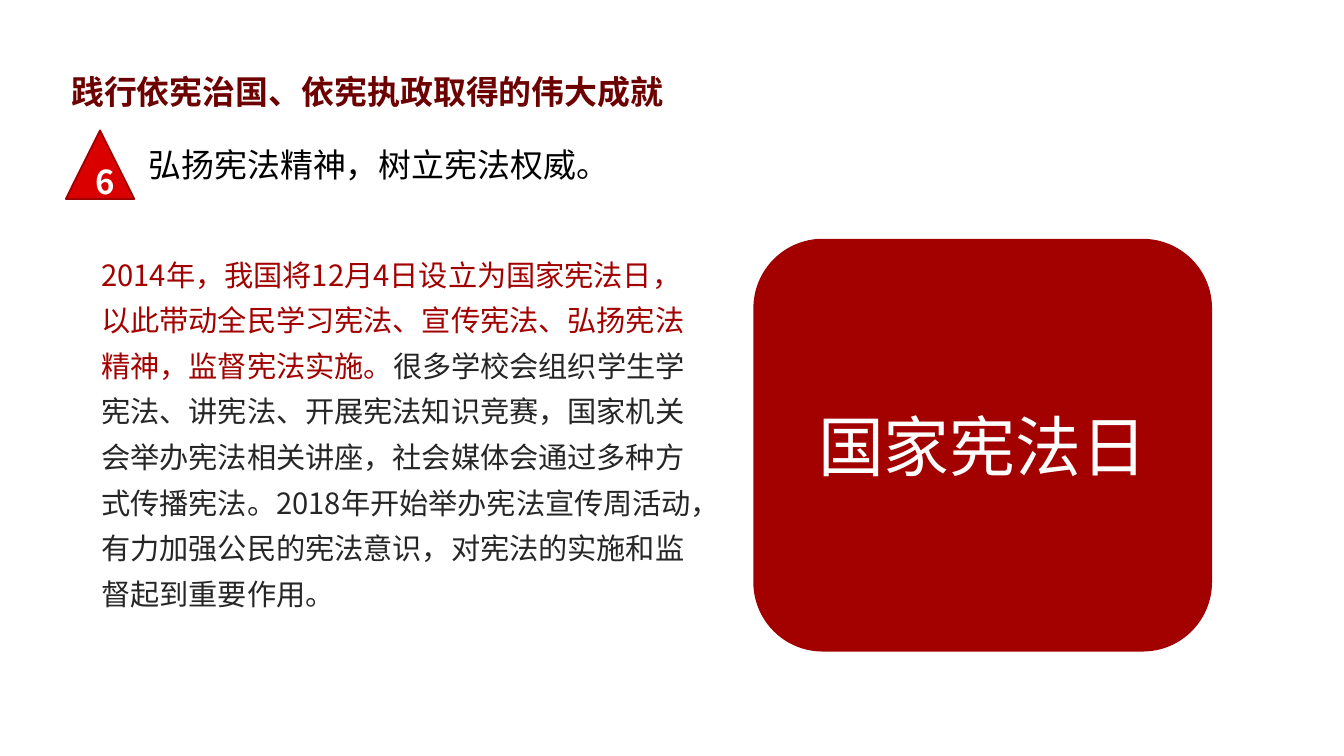
from dataclasses import dataclass

import pptx
import pptx.dml.color
import pptx.enum.shapes
import pptx.enum.text
import pptx.oxml.ns
import pptx.shapes.autoshape
import pptx.slide
import pptx.text.text
import pptx.util
from lxml import etree

RGB = pptx.dml.color.RGBColor
ALIGN = pptx.enum.text.PP_ALIGN
ANCHOR = pptx.enum.text.MSO_ANCHOR
SHAPE = pptx.enum.shapes.MSO_SHAPE
qn = pptx.oxml.ns.qn

FONT = "Noto Sans CJK SC"
MAROON = RGB(0x6D, 0x00, 0x00)
CRIMSON = RGB(0xA3, 0x00, 0x00)
BORDER = RGB(0xA1, 0x00, 0x00)
BRIGHT_RED = RGB(0xDA, 0x00, 0x00)
INK = RGB(0x26, 0x26, 0x26)
BLACK = RGB(0x00, 0x00, 0x00)
WHITE = RGB(0xFF, 0xFF, 0xFF)

SLIDE_W = pptx.util.Inches(10.21)
SLIDE_H = pptx.util.Inches(5.74)


@dataclass
class Box:
    """Place and size in percent of the slide."""
    left: float
    top: float
    width: float
    height: float

    def emu(self) -> dict[str, int]:
        return {
            "left": round(SLIDE_W * self.left / 100),
            "top": round(SLIDE_H * self.top / 100),
            "width": round(SLIDE_W * self.width / 100),
            "height": round(SLIDE_H * self.height / 100),
        }


@dataclass
class Span:
    text: str
    size: int
    color: RGB
    bold: bool = False


@dataclass
class Panel:
    kind: SHAPE
    box: Box
    fill: RGB
    label: Span


TITLE_BOX = Box(4.31, 8.54, 46.62, 6.97)
SUBTITLE_BOX = Box(10.09, 18.29, 69.44, 6.97)
BODY_BOX = Box(6.56, 31.71, 45.94, 50.52)

TITLE = Span("践行依宪治国、依宪执政取得的伟大成就", 18, MAROON, True)
SUBTITLE = Span("弘扬宪法精神，树立宪法权威。", 18, BLACK)
BODY = [
    Span("2014年，我国将12月4日设立为国家宪法日，以此带动全民学习宪法、"
         "宣传宪法、弘扬宪法精神，监督宪法实施。", 16, CRIMSON),
    Span("很多学校会组织学生学宪法、讲宪法、开展宪法知识竞赛，国家机关会举办"
         "宪法相关讲座，社会媒体会通过多种方式传播宪法。2018年开始举办宪法"
         "宣传周活动，有力加强公民的宪法意识，对宪法的实施和监督起到重要作用。",
         16, INK),
]
PANELS = [
    Panel(SHAPE.ISOSCELES_TRIANGLE, Box(4.9, 17.25, 5.09, 9.06), BRIGHT_RED,
          Span("6", 18, WHITE, True)),
    Panel(SHAPE.ROUNDED_RECTANGLE, Box(56.12, 31.71, 33.99, 54.36), CRIMSON,
          Span("国家宪法日", 36, WHITE)),
]


def set_all(obj: object, values: dict[str, object]) -> None:
    for name, value in values.items():
        setattr(obj, name, value)


def write(sp: pptx.shapes.autoshape.Shape, spans: list[Span],
          align: ALIGN = ALIGN.LEFT,
          anchor: ANCHOR = ANCHOR.TOP) -> pptx.text.text._Paragraph:
    """Fill a shape with one paragraph of formatted runs."""
    tf = sp.text_frame
    set_all(tf, {"word_wrap": True, "vertical_anchor": anchor,
                 "auto_size": pptx.enum.text.MSO_AUTO_SIZE.NONE})
    p = tf.paragraphs[0]
    p.alignment = align
    for span in spans:
        r = p.add_run()
        r.text = span.text
        set_all(r.font, {"name": FONT, "size": pptx.util.Pt(span.size),
                         "bold": span.bold})
        r.font.color.rgb = span.color
        # East Asian typeface
        etree.SubElement(r.font._element, qn("a:ea"), typeface=FONT)
    return p


def add_panel(slide: pptx.slide.Slide, panel: Panel) -> None:
    sp = slide.shapes.add_shape(panel.kind, **panel.box.emu())
    sp.shadow.inherit = False
    sp.fill.solid()
    sp.fill.fore_color.rgb = panel.fill
    sp.line.color.rgb = BORDER
    sp.line.width = pptx.util.Pt(1)
    write(sp, [panel.label], ALIGN.CENTER, ANCHOR.MIDDLE)


def main() -> None:
    prs = pptx.Presentation()
    set_all(prs, {"slide_width": SLIDE_W, "slide_height": SLIDE_H})
    slide = prs.slides.add_slide(prs.slide_layouts[1])

    # Title and subtitle
    title = slide.shapes.title
    set_all(title, TITLE_BOX.emu())
    write(title, [TITLE])
    write(slide.shapes.add_textbox(**SUBTITLE_BOX.emu()), [SUBTITLE])

    # Body paragraph without bullet
    body = slide.placeholders[1]
    set_all(body, BODY_BOX.emu())
    p = write(body, BODY)
    pPr = p._p.get_or_add_pPr()
    pPr.set("marL", "0")
    pPr.set("indent", "0")
    etree.SubElement(pPr, qn("a:buNone"))
    set_all(p, {"line_spacing": 1.3, "space_before": pptx.util.Pt(0),
                "space_after": pptx.util.Pt(4)})

    # Numbered triangle and theme card
    for panel in PANELS:
        add_panel(slide, panel)

    prs.save("out.pptx")


if __name__ == "__main__":
    main()
